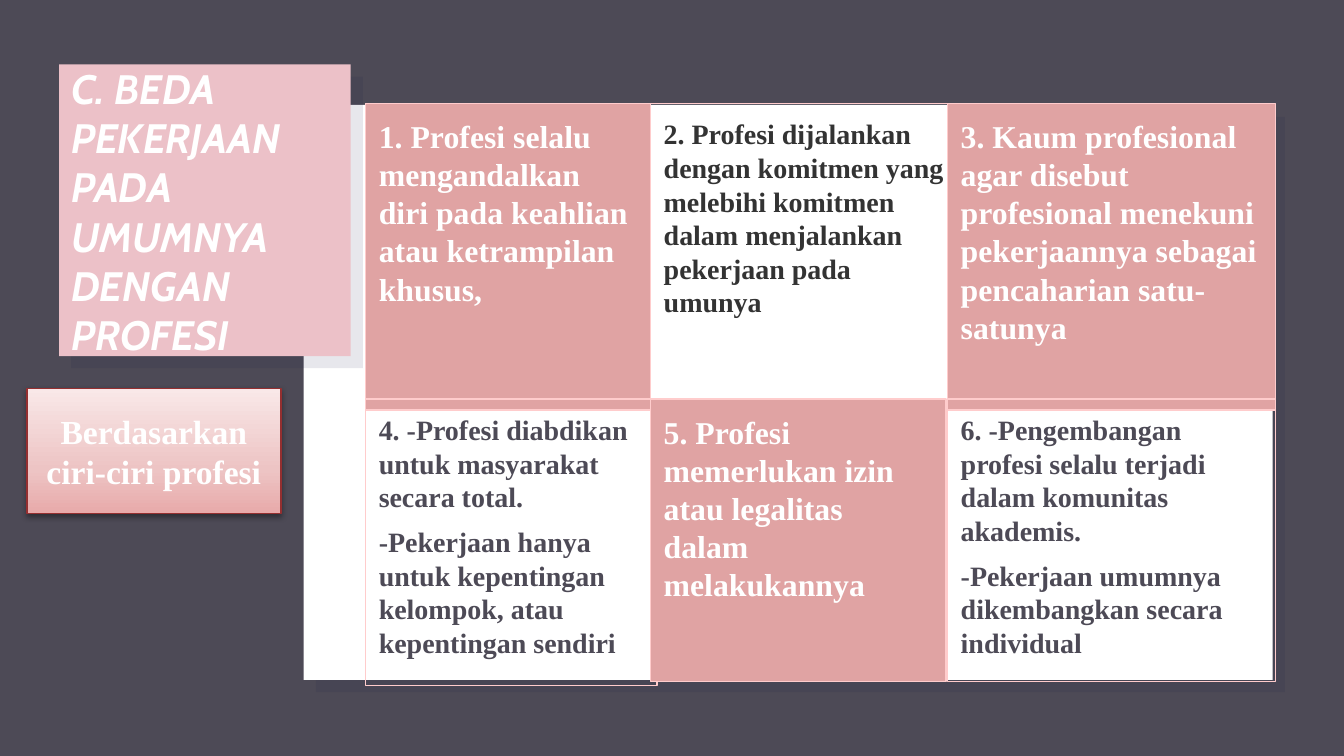
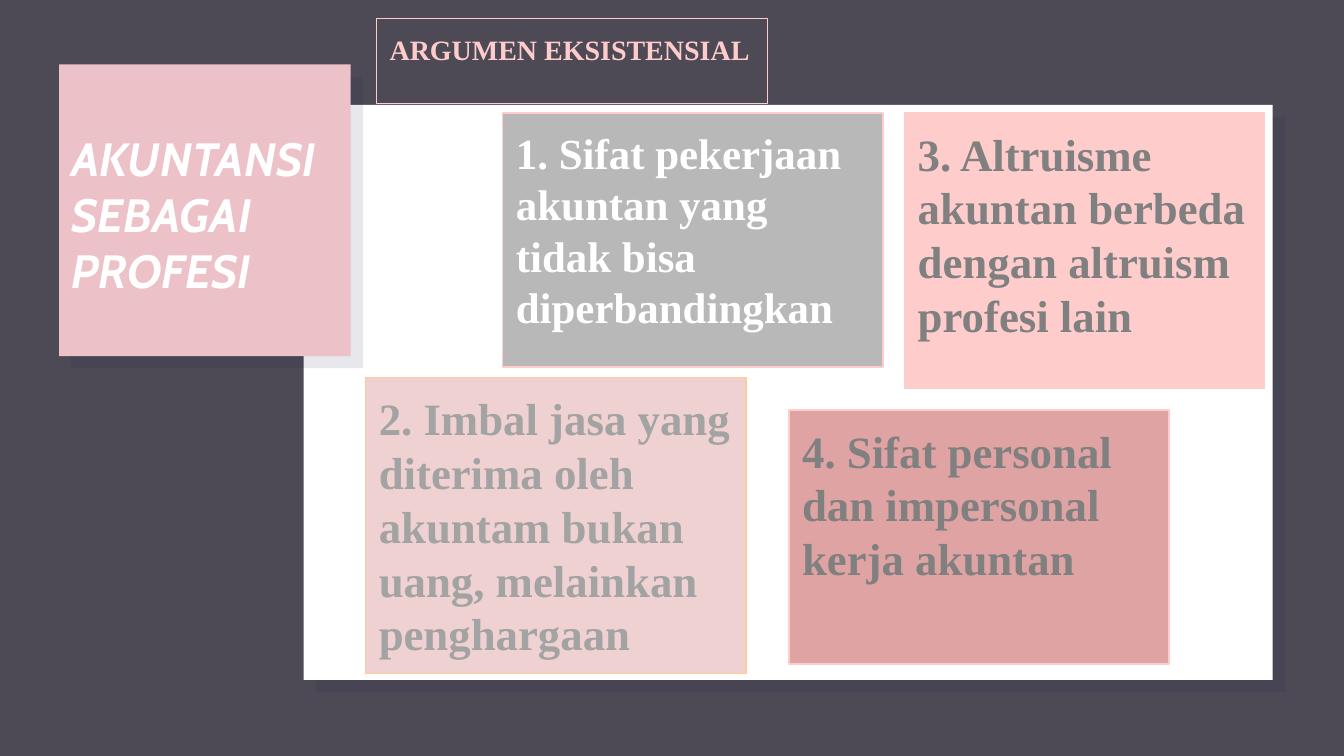
"""Build two slides on the professions and on accounting as a profession."""
from lxml.etree import SubElement
from pptx import Presentation
from pptx.dml.color import RGBColor
from pptx.enum.shapes import MSO_SHAPE as Shape
from pptx.enum.text import MSO_ANCHOR as Anchor, MSO_AUTO_SIZE as AutoSize, PP_ALIGN as Align
from pptx.oxml.ns import qn
from pptx.util import Inches, Pt

COLORS = {
    "background": "4D4A56", "panel": "FFFFFF", "shade": "1B1B46", "title": "ECC1C8",
    "white": "FFFFFF", "dark": "333333", "slate": "4D4A56", "gray": "808080",
    "silver": "A3A3A3", "ash": "B8B8B8", "rose": "E0A3A3", "pink": "FFCCCC",
    "blush": "EFD1D1", "peach": "FFCC99", "crimson": "952F30",
}
TITLE_FONT, BODY_FONT = "Cabin", "Times New Roman"
WIDTH = 10
HEIGHT = WIDTH * 9 / 16
INSET = 0.1

PANELS = [(2.26, 0.78, 7.21, 4.28, "panel"), (0.44, 0.48, 2.17, 2.17, "title")]
SHADE_OFFSET = 0.09

COLUMNS, ROWS = (2.72, 4.84, 7.05), (0.77, 2.97)
TRAITS = [
    (2.12, 2.28, "rose", "white", 17,
     ["1. Profesi selalu mengandalkan diri pada keahlian atau ketrampilan khusus,"]),
    (2.3, 2.28, None, "dark", 15,
     ["2. Profesi dijalankan dengan komitmen yang melebihi komitmen dalam menjalankan "
      "pekerjaan pada umunya"]),
    (2.44, 2.28, "rose", "white", 17,
     ["3. Kaum profesional agar disebut profesional menekuni pekerjaannya sebagai "
      "pencaharian satu-satunya"]),
    (2.17, 2.13, None, "slate", 15,
     ["4. -Profesi diabdikan untuk masyarakat secara total.",
      "-Pekerjaan hanya untuk kepentingan kelompok, atau kepentingan sendiri"]),
    (2.2, 2.1, "rose", "white", 17,
     ["5. Profesi memerlukan izin atau legalitas dalam melakukannya"]),
    (2.44, 2.1, None, "slate", 15,
     ["6. -Pengembangan profesi selalu terjadi dalam komunitas akademis.",
      "-Pekerjaan umumnya dikembangkan secara individual"]),
]
BASIS = "Berdasarkan ciri-ciri profesi"
BASIS_STOPS = [(0, "E8AAAA"), (35, "EDC4C4"), (100, "F9E8E8")]

ARGUMENTS = [
    ((2.8, 0.14, 2.91, 0.63), None, "pink", "pink", 15, "ARGUMEN EKSISTENSIAL"),
    ((6.73, 0.84, 2.68, 2.05), "pink", "pink", "gray", 24,
     "3. Altruisme akuntan berbeda dengan altruism profesi lain"),
    ((2.72, 2.81, 2.83, 2.2), "blush", "peach", "silver", 24,
     "2. Imbal jasa yang diterima oleh akuntam bukan uang, melainkan penghargaan"),
    ((3.74, 0.84, 2.83, 1.89), "ash", "pink", "white", 23,
     "1. Sifat pekerjaan akuntan yang tidak bisa diperbandingkan"),
    ((5.87, 3.05, 2.83, 1.89), "rose", "pink", "gray", 24,
     "4. Sifat personal dan impersonal kerja akuntan"),
]


def rgb(name):
    return RGBColor.from_string(COLORS[name])


def add_rectangle(slide, box, fill=None, line=None):
    shape = slide.shapes.add_shape(Shape.RECTANGLE, *map(Inches, box))
    shape.shadow.inherit = False
    if fill:
        shape.fill.solid()
        shape.fill.fore_color.rgb = rgb(fill)
    else:
        shape.fill.background()
    if line:
        shape.line.color.rgb = rgb(line)
        shape.line.width = Pt(0.75)
    else:
        shape.line.fill.background()
    return shape


def write(shape, paragraphs, size, color, font=BODY_FONT, align=Align.LEFT,
          anchor=Anchor.TOP, italic=False):
    frame = shape.text_frame
    frame.word_wrap = True
    frame.auto_size = AutoSize.NONE
    frame.vertical_anchor = anchor
    frame.margin_left = frame.margin_right = Inches(INSET)
    frame.margin_top = frame.margin_bottom = Inches(INSET)
    frame.text = "\n".join(paragraphs)
    for index, paragraph in enumerate(frame.paragraphs):
        paragraph.alignment = align
        paragraph.line_spacing = 1.0
        paragraph.space_before = Pt(6 if index else 0)
        for run in paragraph.runs:
            run.font.name = font
            run.font.size = Pt(size)
            run.font.bold = True
            run.font.italic = italic
            run.font.color.rgb = rgb(color)


def add_slide(presentation, title_text, size, top, lines_down=0, align=Align.LEFT):
    slide = presentation.slides.add_slide(presentation.slide_layouts[5])
    for left, panel_top, width, height, fill in PANELS:
        shade = add_rectangle(slide, (left + SHADE_OFFSET, panel_top + SHADE_OFFSET,
                                      width, height), "shade")
        tint = shade.fill._xPr.find(".//" + qn("a:srgbClr"))
        SubElement(tint, qn("a:alpha"), val="10000")
        add_rectangle(slide, (left, panel_top, width, height), fill)
    title = slide.shapes.title
    title.left, title.top, title.width, title.height = map(Inches, (0.43, top, 2.14, 2.2))
    write(title, [title_text], size, "white", TITLE_FONT, align, italic=True)
    title.text_frame.margin_top = Inches(INSET) + Pt(1.2 * size * lines_down)
    slide.shapes._spTree.append(title._element)
    return slide


def add_basis(slide):
    shape = add_rectangle(slide, (0.2, 2.89, 1.89, 0.93), line="crimson")
    shape.fill.gradient()
    shape.fill.gradient_angle = 90
    properties = shape._element.spPr
    stops = properties.find(".//" + qn("a:gsLst"))
    for stop in list(stops):
        stops.remove(stop)
    for position, color in BASIS_STOPS:
        stop = SubElement(stops, qn("a:gs"), pos=str(position * 1000))
        SubElement(stop, qn("a:srgbClr"), val=color)
    shadow = SubElement(properties.find(qn("a:effectLst")), qn("a:outerShdw"),
                        blurRad=str(Pt(3.1)), dist=str(Pt(1.6)), dir="5400000",
                        rotWithShape="0")
    black = SubElement(shadow, qn("a:srgbClr"), val="000000")
    SubElement(black, qn("a:alpha"), val="38000")
    write(shape, [BASIS], 18, "white", align=Align.CENTER, anchor=Anchor.MIDDLE)


def main():
    presentation = Presentation()
    presentation.slide_width, presentation.slide_height = Inches(WIDTH), Inches(HEIGHT)
    background = presentation.slide_master.background.fill
    background.solid()
    background.fore_color.rgb = rgb("background")

    slide = add_slide(presentation, "C. BEDA PEKERJAAN PADA UMUMNYA DENGAN PROFESI", 22, 0.37)
    for index, (width, height, fill, color, size, paragraphs) in enumerate(TRAITS):
        row, column = divmod(index, len(COLUMNS))
        cell = add_rectangle(slide, (COLUMNS[column], ROWS[row], width, height), fill, "pink")
        write(cell, paragraphs, size, color)
    add_basis(slide)

    slide = add_slide(presentation, "AKUNTANSI SEBAGAI PROFESI", 25, 0.45, 1, Align.JUSTIFY)
    for box, fill, line, color, size, text in ARGUMENTS:
        write(add_rectangle(slide, box, fill, line), [text], size, color)

    presentation.save("out.pptx")


if __name__ == "__main__":
    main()
